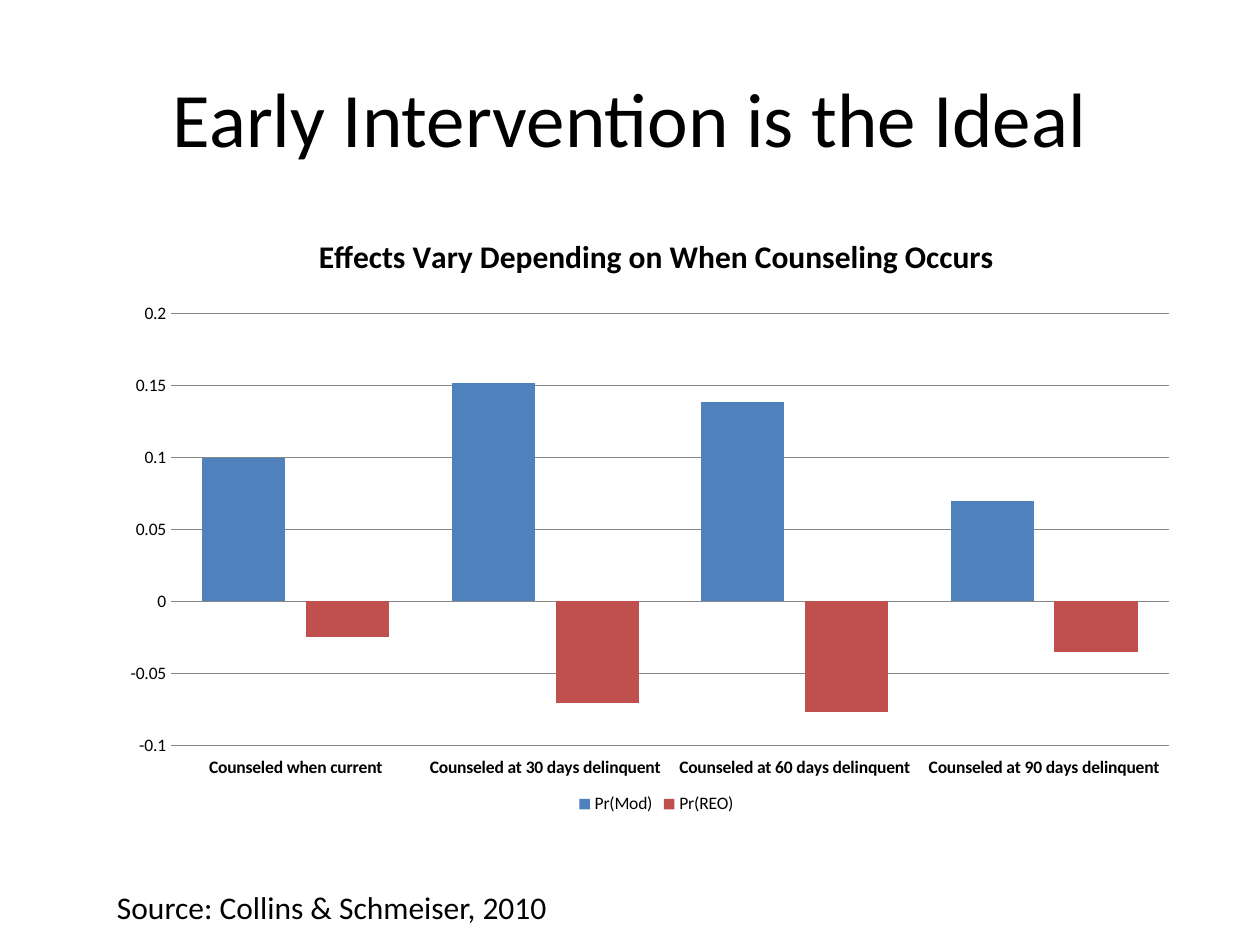
"""Build a slide with a column chart on counseling effects by timing."""
import pptx
import pptx.chart.data
import pptx.dml.color
import pptx.enum.chart
import pptx.enum.text
import pptx.oxml
import pptx.oxml.ns
import pptx.util

Inches = pptx.util.Inches
COLORS = {"text": "000000", "grid": "878787", "Pr(Mod)": "4F81BD", "Pr(REO)": "C0504D"}
EFFECTS = {
    "Pr(Mod)": (0.1, 0.152, 0.139, 0.07),
    "Pr(REO)": (-0.025, -0.071, -0.077, -0.035),
}
PLOT_LAYOUT = {
    "layoutTarget": "inner", "xMode": "edge", "yMode": "edge",
    "x": 0.051, "y": 0.17, "w": 0.923, "h": 0.709,
}


def rgb(name):
    return pptx.dml.color.RGBColor.from_string(COLORS[name])


def style_font(font, size, bold=False):
    for name, value in {"name": "Calibri", "size": pptx.util.Pt(size), "bold": bold}.items():
        setattr(font, name, value)
    font.color.rgb = rgb("text")


deck = pptx.Presentation()
deck.slide_width, deck.slide_height = Inches(10), Inches(7.5)
page = deck.slides.add_slide(deck.slide_layouts[6])

anchors, aligns = pptx.enum.text.MSO_ANCHOR, pptx.enum.text.PP_ALIGN
for wording, place, size, align, frame_format in (
    ("Early Intervention is the Ideal", (0.5, 0.3, 9, 1.25), 44, aligns.CENTER,
     {"word_wrap": True, "vertical_anchor": anchors.MIDDLE}),
    ("Source: Collins & Schmeiser, 2010", (0.83, 7, 3.72, 0.4), 18, aligns.LEFT,
     {"word_wrap": False, "auto_size": pptx.enum.text.MSO_AUTO_SIZE.SHAPE_TO_FIT_TEXT}),
):
    box = page.shapes.add_textbox(*map(Inches, place))
    for name, value in frame_format.items():
        setattr(box.text_frame, name, value)
    para = box.text_frame.paragraphs[0]
    para.alignment = align
    span = para.add_run()
    span.text = wording
    style_font(span.font, size)

chart_data = pptx.chart.data.CategoryChartData()
chart_data.categories = ["Counseled when current"] + [
    f"Counseled at {days} days delinquent" for days in (30, 60, 90)
]
for name, values in EFFECTS.items():
    chart_data.add_series(name, values)
kinds = pptx.enum.chart
chart = page.shapes.add_chart(
    kinds.XL_CHART_TYPE.COLUMN_CLUSTERED,
    *map(Inches, (0.92, 1.67, 8.58, 4.83)), chart_data,
).chart
style_font(chart.font, 10)

chart.has_title = True
title_para = chart.chart_title.text_frame.paragraphs[0]
title_span = title_para.add_run()
title_span.text = "Effects Vary Depending on When Counseling Occurs"
style_font(title_span.font, 18, True)
chart.chart_title.include_in_layout = False

chart.has_legend = True
chart.legend.position = kinds.XL_LEGEND_POSITION.BOTTOM
chart.legend.include_in_layout = False
style_font(chart.legend.font, 10)

plot = chart.plots[0]
for name, value in {"gap_width": 75, "overlap": -25, "vary_by_categories": False}.items():
    setattr(plot, name, value)
for series in plot.series:
    series.invert_if_negative = False
    series.format.fill.solid()
    series.format.fill.fore_color.rgb = rgb(series.name)

for axis, bold in ((chart.category_axis, True), (chart.value_axis, False)):
    axis.major_tick_mark = axis.minor_tick_mark = kinds.XL_TICK_MARK.NONE
    style_font(axis.tick_labels.font, 10, bold)
chart.category_axis.tick_label_position = kinds.XL_TICK_LABEL_POSITION.LOW
chart.category_axis.format.line.color.rgb = rgb("grid")
chart.category_axis.format.line.width = pptx.util.Pt(1)

value_axis = chart.value_axis
for name, value in {
    "minimum_scale": -0.1, "maximum_scale": 0.2, "major_unit": 0.05,
    "has_major_gridlines": True, "crosses": kinds.XL_AXIS_CROSSES.AUTOMATIC,
}.items():
    setattr(value_axis, name, value)
value_axis.tick_labels.number_format = "General"
value_axis.tick_labels.number_format_is_linked = False
value_axis.format.line.fill.background()
value_axis.major_gridlines.format.line.color.rgb = rgb("grid")

plot_area = plot._element.getparent()
for old_layout in plot_area.findall(pptx.oxml.ns.qn("c:layout")):
    plot_area.remove(old_layout)
settings = "".join(f'<c:{key} val="{value}"/>' for key, value in PLOT_LAYOUT.items())
plot_area.insert(0, pptx.oxml.parse_xml(
    f'<c:layout {pptx.oxml.ns.nsdecls("c")}><c:manualLayout>{settings}</c:manualLayout></c:layout>'
))

deck.save("out.pptx")
